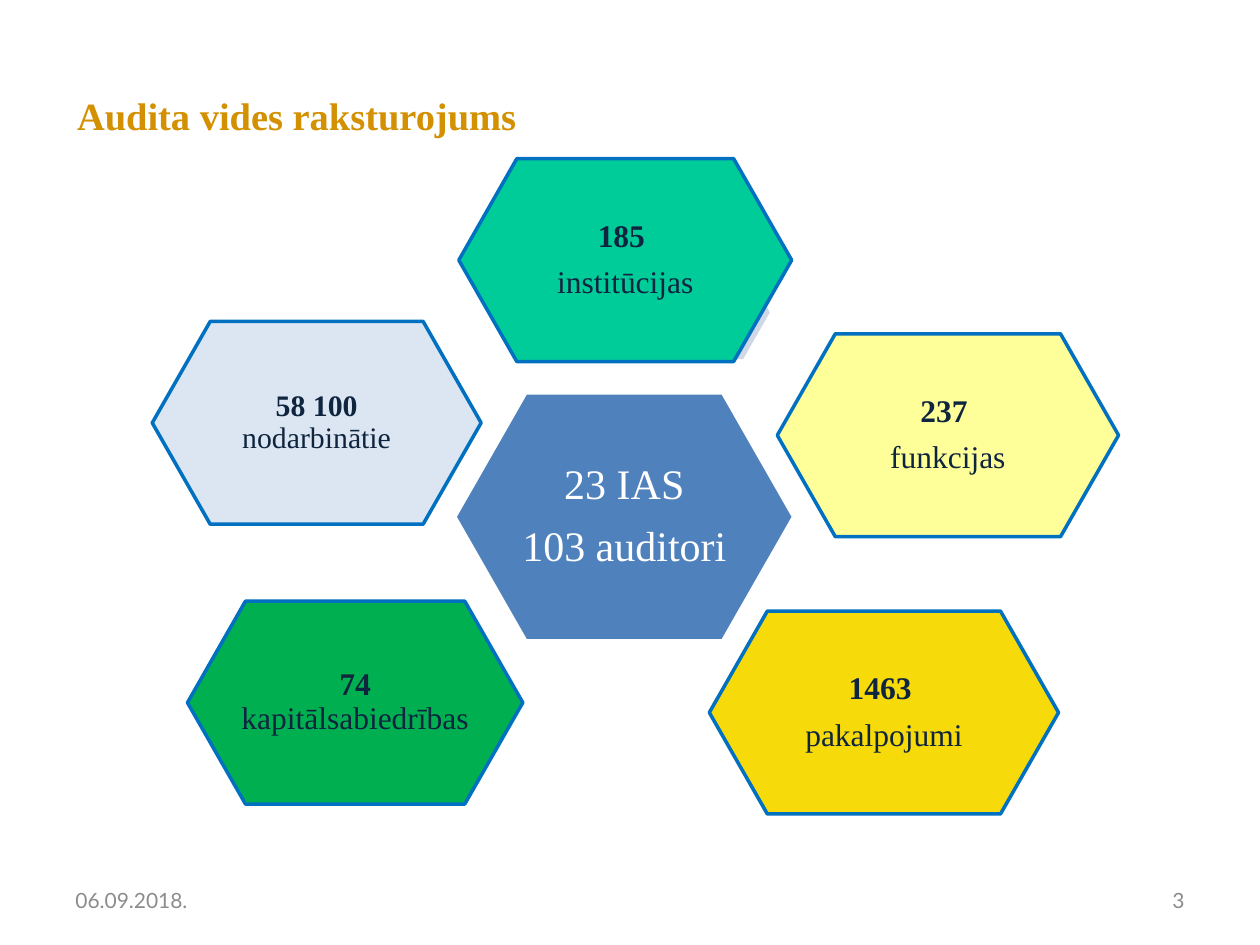
from dataclasses import dataclass

from pptx import Presentation
from pptx import util as u
from pptx.dml.color import RGBColor
from pptx.enum import shapes, text

SERIF = "Times New Roman"
INK = "0F243E"
EDGE = "0070C0"
GREY = "8C8C8C"
TILE_HEIGHT = 4.09
TEXT_INSET = 0.143  # share of the hexagon left free on each side of its text


@dataclass
class Hexagon:
    """Lengths in cm; each paragraph is a list of (words, bold) runs."""
    left: float
    top: float
    width: float
    fill: str
    paragraphs: list
    height: float = TILE_HEIGHT
    edge: str = EDGE
    size: float = 18
    color: str = INK


def stacked(number: str, label: str) -> list:
    return [[(number + " ", True)], [(label, False)]]


def flowing(number: str, label: str) -> list:
    return [[(number + " ", True), (label, False)]]


HEXAGONS = [
    Hexagon(9.17, 7.92, 6.83, "4F81BD", [[("23 IAS", False)], [("103 auditori", False)]],
            height=5, edge="FFFFFF", size=24, color="FFFFFF"),
    Hexagon(9.25, 3.2, 6.71, "00CC99", stacked("185", "institūcijas")),
    Hexagon(15.67, 6.73, 6.88, "FFFF99", stacked("237", "funkcijas")),
    Hexagon(14.3, 12.32, 7.04, "F6DA0A", stacked("1463", "pakalpojumi")),
    Hexagon(3.78, 12.12, 6.76, "00B050", flowing("74", "kapitālsabiedrības")),
    Hexagon(3.07, 6.48, 6.63, "DCE6F2", flowing("58 100", "nodarbinātie"), size=17),
]


def rgb(color: str) -> RGBColor:
    return RGBColor.from_string(color)


def add_span(para, words: str, *, size: float, color: str, font: str = SERIF,
             bold: bool = False) -> None:
    span = para.add_run()
    span.text = words
    span.font.name = font
    span.font.size = u.Pt(size)
    span.font.bold = bold
    span.font.color.rgb = rgb(color)


def add_box(slide, left: float, top: float, width: float, height: float):
    box = slide.shapes.add_textbox(u.Cm(left), u.Cm(top), u.Cm(width), u.Cm(height))
    box.text_frame.word_wrap = True
    box.text_frame.vertical_anchor = text.MSO_ANCHOR.MIDDLE
    return box


def add_hexagon(slide, left: float, top: float, width: float, height: float,
                fill: str, edge: str | None = None) -> None:
    shape = slide.shapes.add_shape(shapes.MSO_SHAPE.HEXAGON, u.Cm(left), u.Cm(top),
                                   u.Cm(width), u.Cm(height))
    shape.adjustments[0] = 0.286
    shape.shadow.inherit = False
    shape.fill.solid()
    shape.fill.fore_color.rgb = rgb(fill)
    if edge:
        shape.line.color.rgb = rgb(edge)
        shape.line.width = u.Pt(2)
    else:
        shape.line.fill.background()


def add_tile(slide, tile: Hexagon) -> None:
    """Draw a hexagon with its centred text."""
    add_hexagon(slide, tile.left, tile.top, tile.width, tile.height, tile.fill, tile.edge)
    dx, dy = tile.width * TEXT_INSET, tile.height * TEXT_INSET
    frame = add_box(slide, tile.left + dx, tile.top + dy,
                    tile.width - 2 * dx, tile.height - 2 * dy).text_frame
    frame.margin_left = frame.margin_right = u.Cm(0.08)
    frame.margin_top = frame.margin_bottom = u.Cm(0.08)
    for index, runs in enumerate(tile.paragraphs):
        para = frame.add_paragraph() if index else frame.paragraphs[0]
        para.alignment = text.PP_ALIGN.CENTER
        para.line_spacing = 0.9
        para.space_after = u.Pt(round(tile.size * 0.4, 1))
        for words, bold in runs:
            add_span(para, words, size=tile.size, color=tile.color, bold=bold)


def add_footer(slide, left: float, words: str, align) -> None:
    para = add_box(slide, left, 17.65, 5.93, 1.01).text_frame.paragraphs[0]
    para.alignment = align
    add_span(para, words, size=12, color=GREY, font="Lato")


def add_title(slide, words: str) -> None:
    title = slide.shapes.title
    title.left, title.top = u.Cm(1.3), u.Cm(1.73)
    title.width, title.height = u.Cm(15.8), u.Cm(1.19)
    title.text_frame.vertical_anchor = text.MSO_ANCHOR.MIDDLE
    para = title.text_frame.paragraphs[0]
    para.alignment = text.PP_ALIGN.LEFT
    add_span(para, words, size=22, color="D39001", bold=True)


def main() -> None:
    deck = Presentation()
    deck.slide_width, deck.slide_height = u.Cm(25.4), u.Cm(19.05)
    slide = deck.slides.add_slide(deck.slide_layouts[5])

    add_title(slide, "Audita vides raksturojums")
    add_footer(slide, 1.27, "06.09.2018.", text.PP_ALIGN.LEFT)
    add_footer(slide, 18.2, "3", text.PP_ALIGN.RIGHT)
    add_hexagon(slide, 13.34, 5.36, 2.18, 1.88, "D0D8E8")
    for tile in HEXAGONS:
        add_tile(slide, tile)
    deck.save("out.pptx")


if __name__ == "__main__":
    main()
